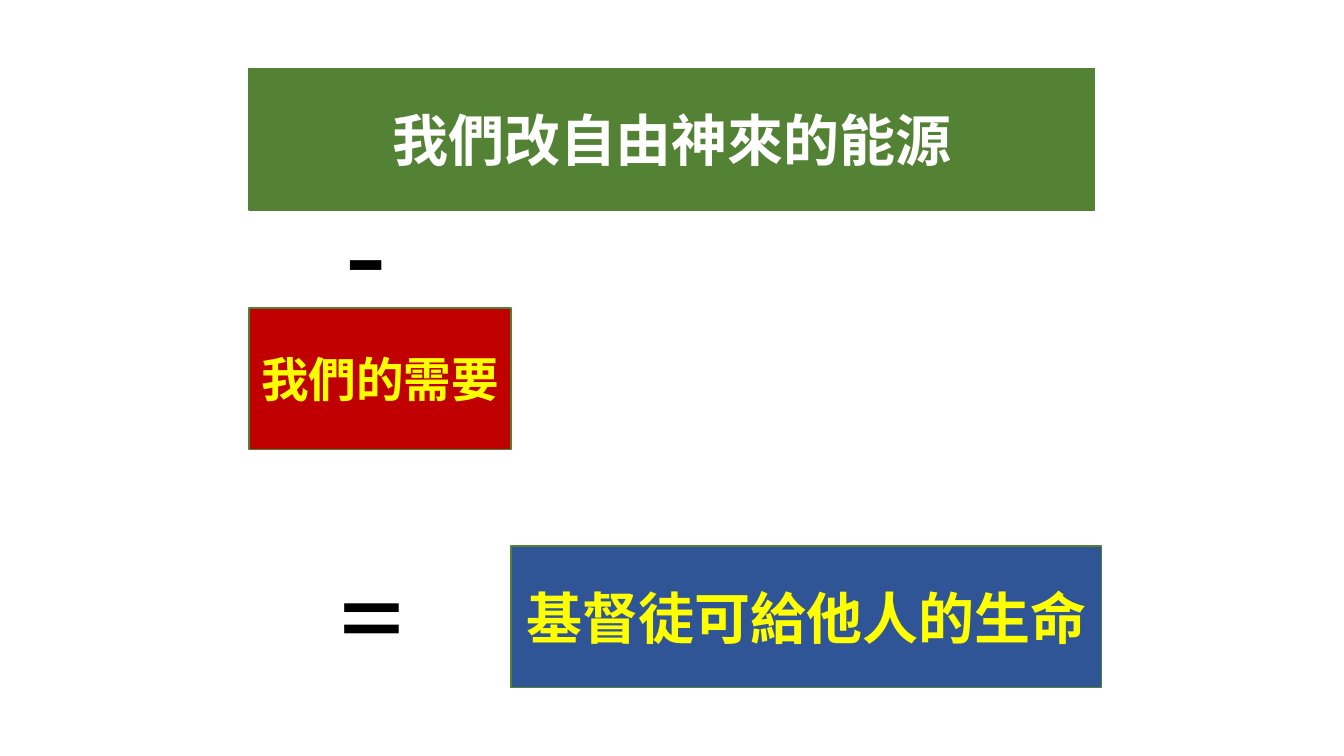
import pptx
import pptx.dml.color
import pptx.enum.shapes
import pptx.enum.text
import pptx.oxml.ns
import pptx.util
from dataclasses import dataclass

Pt = pptx.util.Pt


@dataclass(frozen=True)
class Theme:
    cjk_font: str = "Noto Sans CJK TC"
    latin_font: str = "Calibri"
    green: str = "548235"
    border: str = "538035"
    red: str = "C00000"
    blue: str = "2F5597"
    white: str = "FFFFFF"
    yellow: str = "FFFF00"
    black: str = "000000"
    large: int = 40
    medium: int = 34
    sign: int = 96


class SlideBuilder:
    def __init__(self, slide, theme):
        self.slide = slide
        self.theme = theme

    def color(self, value):
        return pptx.dml.color.RGBColor.from_string(value)

    def add_span(self, para, text, size, color, font, bold=False):
        span = para.add_run()
        span.text = text
        span.font.name = font
        span.font.size = Pt(size)
        span.font.bold = bold
        span.font.color.rgb = self.color(color)
        if font == self.theme.cjk_font:
            properties = span.font._element
            east_asian = properties.makeelement(pptx.oxml.ns.qn("a:ea"), {"typeface": font})
            properties.find(pptx.oxml.ns.qn("a:latin")).addnext(east_asian)

    def block(self, left, top, width, height, fill, text, size, color):
        box = self.slide.shapes.add_shape(
            pptx.enum.shapes.MSO_SHAPE.RECTANGLE, Pt(left), Pt(top), Pt(width), Pt(height))
        box.shadow.inherit = False
        box.fill.solid()
        box.fill.fore_color.rgb = self.color(fill)
        box.line.color.rgb = self.color(self.theme.border)
        box.line.width = Pt(1)
        frame = box.text_frame
        frame.word_wrap = True
        frame.vertical_anchor = pptx.enum.text.MSO_ANCHOR.MIDDLE
        para = frame.paragraphs[0]
        para.alignment = pptx.enum.text.PP_ALIGN.CENTER
        self.add_span(para, text, size, color, self.theme.cjk_font, bold=True)

    def sign(self, left, top, text):
        box = self.slide.shapes.add_textbox(Pt(left), Pt(top), Pt(3.6), Pt(124))
        frame = box.text_frame
        frame.word_wrap = True
        frame.auto_size = pptx.enum.text.MSO_AUTO_SIZE.SHAPE_TO_FIT_TEXT
        frame.margin_left = frame.margin_right = Pt(0)
        self.add_span(frame.paragraphs[0], text, self.theme.sign, self.theme.black,
                      self.theme.latin_font)


def main():
    deck = pptx.Presentation()
    deck.slide_width, deck.slide_height = Pt(960), Pt(540)
    theme = Theme()
    page = SlideBuilder(deck.slides.add_slide(deck.slide_layouts[6]), theme)

    left, block_height = 178, 101
    need_width = 187

    # Energy received, our needs, and what remains for others
    page.block(left, 49, 604, block_height, theme.green,
               "我們改自由神來的能源", theme.large, theme.white)
    page.block(left, 220, need_width, block_height, theme.red,
               "我們的需要", theme.medium, theme.yellow)
    page.block(left + need_width, 390, 422, block_height, theme.blue,
               "基督徒可給他人的生命", theme.large, theme.yellow)

    # Arithmetic signs between the blocks
    page.sign(247, 117, "-")
    page.sign(242, 373, "=")

    deck.save("out.pptx")


if __name__ == "__main__":
    main()
